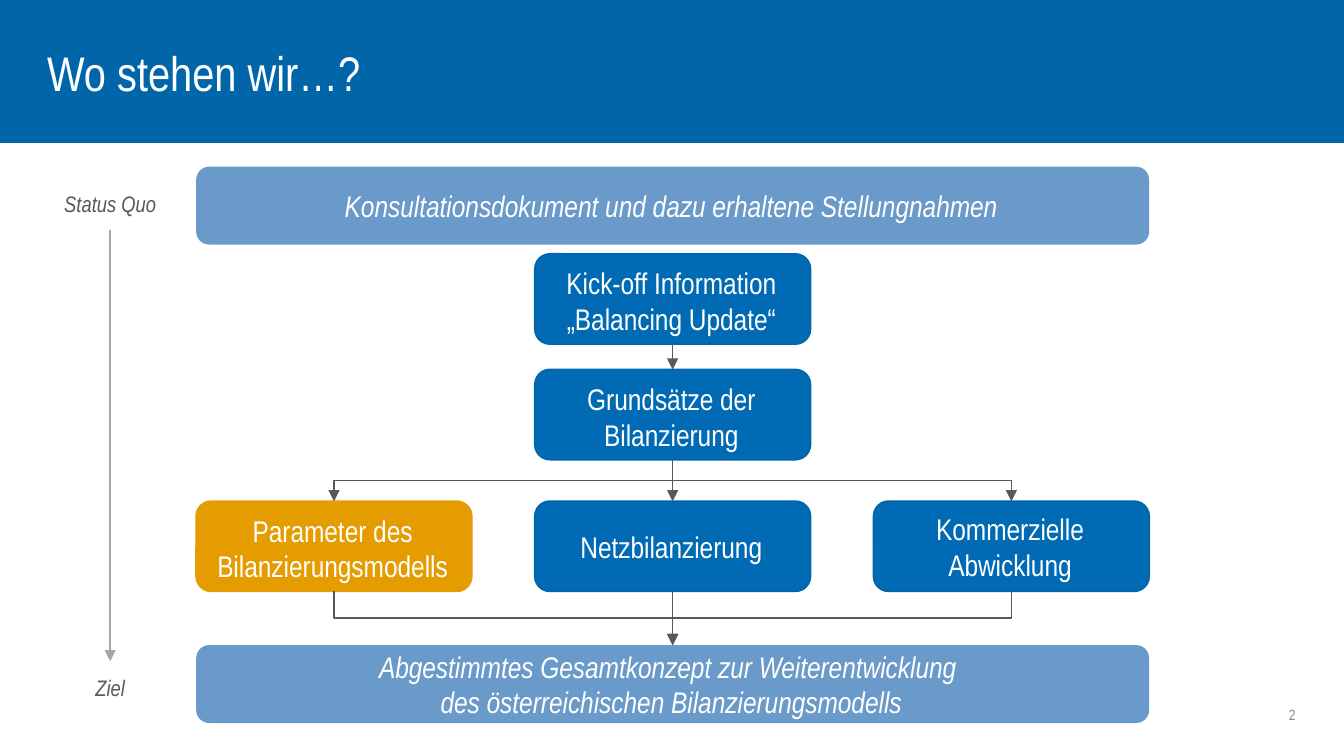
import pptx
import pptx.util
import pptx.dml.color
import pptx.enum.shapes
import pptx.enum.text
import pptx.oxml

Inches = pptx.util.Inches
ANCHOR = pptx.enum.text.MSO_ANCHOR
ALIGN = pptx.enum.text.PP_ALIGN
SHAPE = pptx.enum.shapes.MSO_SHAPE
CONNECTOR = pptx.enum.shapes.MSO_CONNECTOR

FONT = "Arial Narrow"
WHITE, GREY, PALE_GREY = "FFFFFF", "58585A", "A6A6A6"
BLUE, DARK_BLUE, LIGHT_BLUE, ORANGE = "006BB4", "0066A9", "699AC9", "E49C00"

LEFT, COLUMN_STEP = 1.46, 2.52
BOX_WIDTH, BOX_HEIGHT = 2.05, 0.67
BANNER_WIDTH, BANNER_HEIGHT = 2 * COLUMN_STEP + BOX_WIDTH, 0.58
TOP_SITE, BOTTOM_SITE = 0, 2


def rgb(value):
    return pptx.dml.color.RGBColor.from_string(value)


def write(shape, text, size, color, italic=False, align=ALIGN.CENTER,
          anchor=ANCHOR.MIDDLE, insets=(0, 0, 0, 0)):
    frame = shape.text_frame
    frame.word_wrap = True
    frame.auto_size = pptx.enum.text.MSO_AUTO_SIZE.NONE
    frame.vertical_anchor = anchor
    (frame.margin_left, frame.margin_top,
     frame.margin_right, frame.margin_bottom) = map(Inches, insets)
    paragraph = frame.paragraphs[0]
    paragraph.alignment = align
    for index, line in enumerate(text.split("\n")):
        if index:
            paragraph.add_line_break()
        run = paragraph.add_run()
        run.text = line
        run.font.name = FONT
        run.font.size = pptx.util.Pt(size)
        run.font.italic = italic
        run.font.color.rgb = rgb(color)


def add_block(slide, kind, left, top, width, height, fill, outline=None):
    block = slide.shapes.add_shape(
        kind, Inches(left), Inches(top), Inches(width), Inches(height))
    block.shadow.inherit = False
    block.fill.solid()
    block.fill.fore_color.rgb = rgb(fill)
    if outline:
        block.line.color.rgb = rgb(outline)
        block.line.width = pptx.util.Pt(1)
    else:
        block.line.fill.background()
    return block


def add_step(slide, text, column, top, fill=BLUE, outline=DARK_BLUE,
             anchor=ANCHOR.MIDDLE):
    step = add_block(slide, SHAPE.ROUNDED_RECTANGLE, LEFT + column * COLUMN_STEP,
                     top, BOX_WIDTH, BOX_HEIGHT, fill, outline)
    write(step, text, 16, WHITE, anchor=anchor, insets=(0.08, 0.05, 0.1, 0.05))
    return step


def add_banner(slide, text, top):
    banner = add_block(slide, SHAPE.ROUNDED_RECTANGLE, LEFT, top,
                       BANNER_WIDTH, BANNER_HEIGHT, LIGHT_BLUE)
    write(banner, text, 16, WHITE, italic=True, insets=(0.08, 0.05, 0.1, 0.05))
    return banner


def add_label(slide, text, left, top, width, height, size, color, **style):
    label = slide.shapes.add_textbox(
        Inches(left), Inches(top), Inches(width), Inches(height))
    write(label, text, size, color, **style)


def add_arrow(slide, kind, start, end, color):
    arrow = slide.shapes.add_connector(kind, *start, *end)
    arrow.line.color.rgb = rgb(color)
    arrow.line.width = pptx.util.Pt(0.75)
    arrow.line._get_or_add_ln().append(pptx.oxml.parse_xml(
        '<a:tailEnd xmlns:a="http://schemas.openxmlformats.org/drawingml/2006/main"'
        ' type="triangle"/>'))
    arrow._element.spPr.append(pptx.oxml.parse_xml(
        '<a:effectLst xmlns:a="http://schemas.openxmlformats.org/drawingml/2006/main"/>'))
    return arrow


def link(slide, upper, lower):
    """Glue an arrow from the bottom of one box to the top of another."""
    start = (upper.left + upper.width // 2, upper.top + upper.height)
    end = (lower.left + lower.width // 2, lower.top)
    across, down = end[0] - start[0], end[1] - start[1]
    straight = abs(across) < Inches(0.02)
    kind = CONNECTOR.STRAIGHT if straight else CONNECTOR.ELBOW
    arrow = add_arrow(slide, kind, start, end, GREY)
    arrow.begin_connect(upper, BOTTOM_SITE)
    arrow.end_connect(lower, TOP_SITE)
    if straight:
        return
    # An elbow leaves sideways, so it is turned to leave downwards.
    arrow.width, arrow.height = down, abs(across)
    arrow.left = (start[0] + end[0] - down) // 2
    arrow.top = (start[1] + end[1] - abs(across)) // 2
    transform = arrow._element.spPr.xfrm
    transform.set("rot", str((270 if across > 0 else 90) * 60000))
    transform.set("flipH", "1" if across > 0 else "0")


def add_heading(slide, text):
    band = add_block(slide, SHAPE.RECTANGLE, 0, 0, 10, 1.06, DARK_BLUE, DARK_BLUE)
    slide.shapes._spTree.insert(2, band._element)
    title = slide.shapes.title
    title.left, title.top = Inches(0.35), Inches(0.36)
    title.width, title.height = Inches(7.28), Inches(0.39)
    write(title, text, 26, WHITE, align=ALIGN.LEFT, insets=(0, 0, 0, 0.04))


def add_timeline(slide):
    for text, top in (("Status Quo", 1.32), ("Ziel", 4.92)):
        add_label(slide, text, 0.35, top, 0.94, 0.39, 12, GREY, italic=True)
    add_arrow(slide, CONNECTOR.STRAIGHT, (Inches(0.82), Inches(1.71)),
              (Inches(0.82), Inches(4.92)), PALE_GREY)


def add_process(slide):
    add_banner(slide, "Konsultationsdokument und dazu erhaltene Stellungnahmen", 1.24)
    kickoff = add_step(slide, "Kick-off Information\n„Balancing Update“", 1, 1.89,
                       anchor=ANCHOR.TOP)
    principles = add_step(slide, "Grundsätze der Bilanzierung", 1, 2.75,
                          anchor=ANCHOR.TOP)
    topics = [
        add_step(slide, "Parameter des Bilanzierungsmodells", 0, 3.73,
                 ORANGE, ORANGE, ANCHOR.TOP),
        add_step(slide, "Netzbilanzierung", 1, 3.73),
        add_step(slide, "Kommerzielle Abwicklung", 2, 3.73),
    ]
    concept = add_banner(
        slide, "Abgestimmtes Gesamtkonzept zur Weiterentwicklung \n"
        "des österreichischen Bilanzierungsmodells", 4.8)
    link(slide, kickoff, principles)
    for topic in topics:
        link(slide, principles, topic)
        link(slide, topic, concept)


def main():
    presentation = pptx.Presentation()
    presentation.slide_width = Inches(10)
    presentation.slide_height = Inches(10) * 9 // 16
    slide = presentation.slides.add_slide(
        presentation.slide_layouts.get_by_name("Title Only"))
    add_heading(slide, "Wo stehen wir…?")
    add_timeline(slide)
    add_process(slide)
    add_label(slide, "2", 8.46, 5.22, 1.18, 0.2, 8, "87888A", align=ALIGN.RIGHT)
    presentation.save("out.pptx")


if __name__ == "__main__":
    main()
